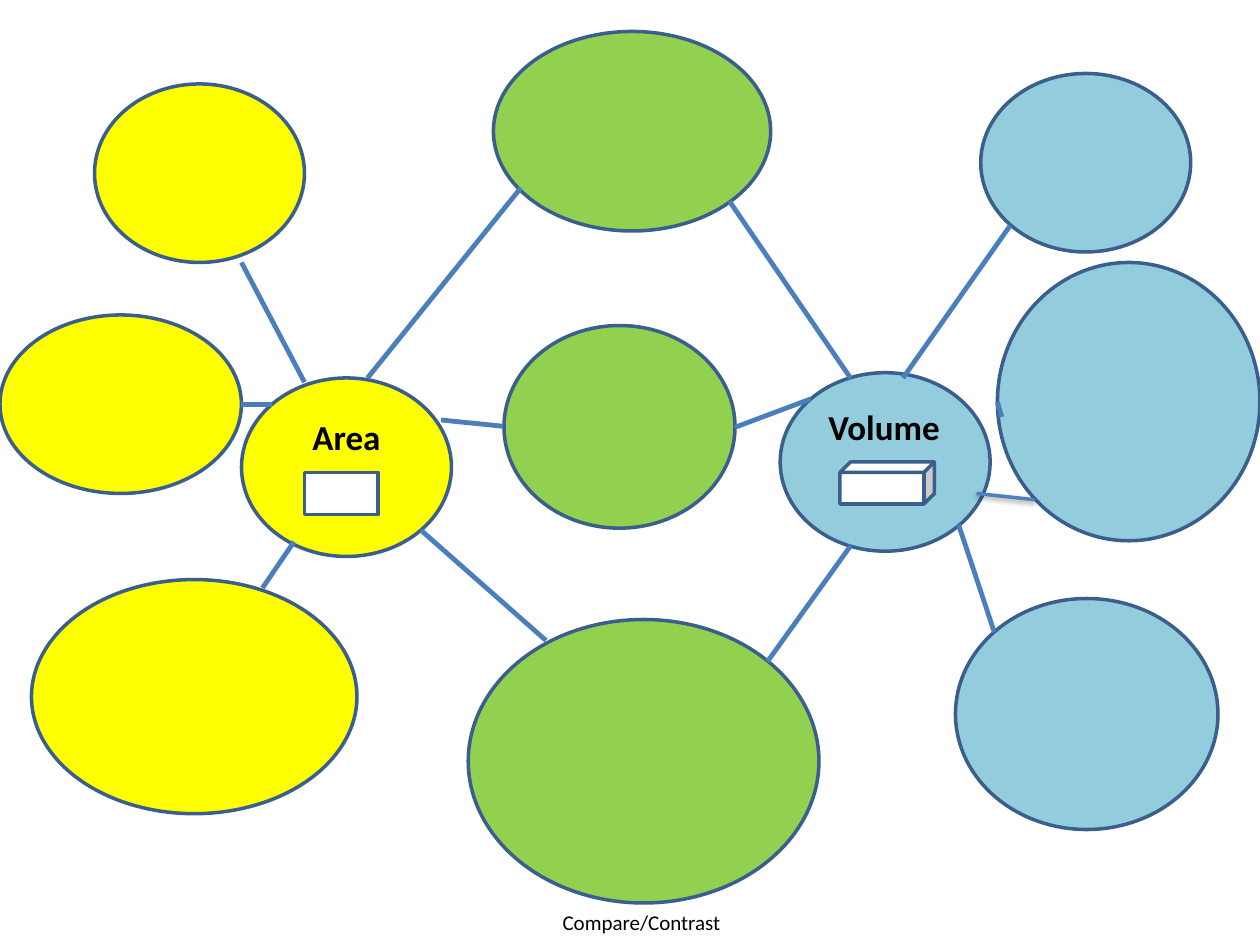
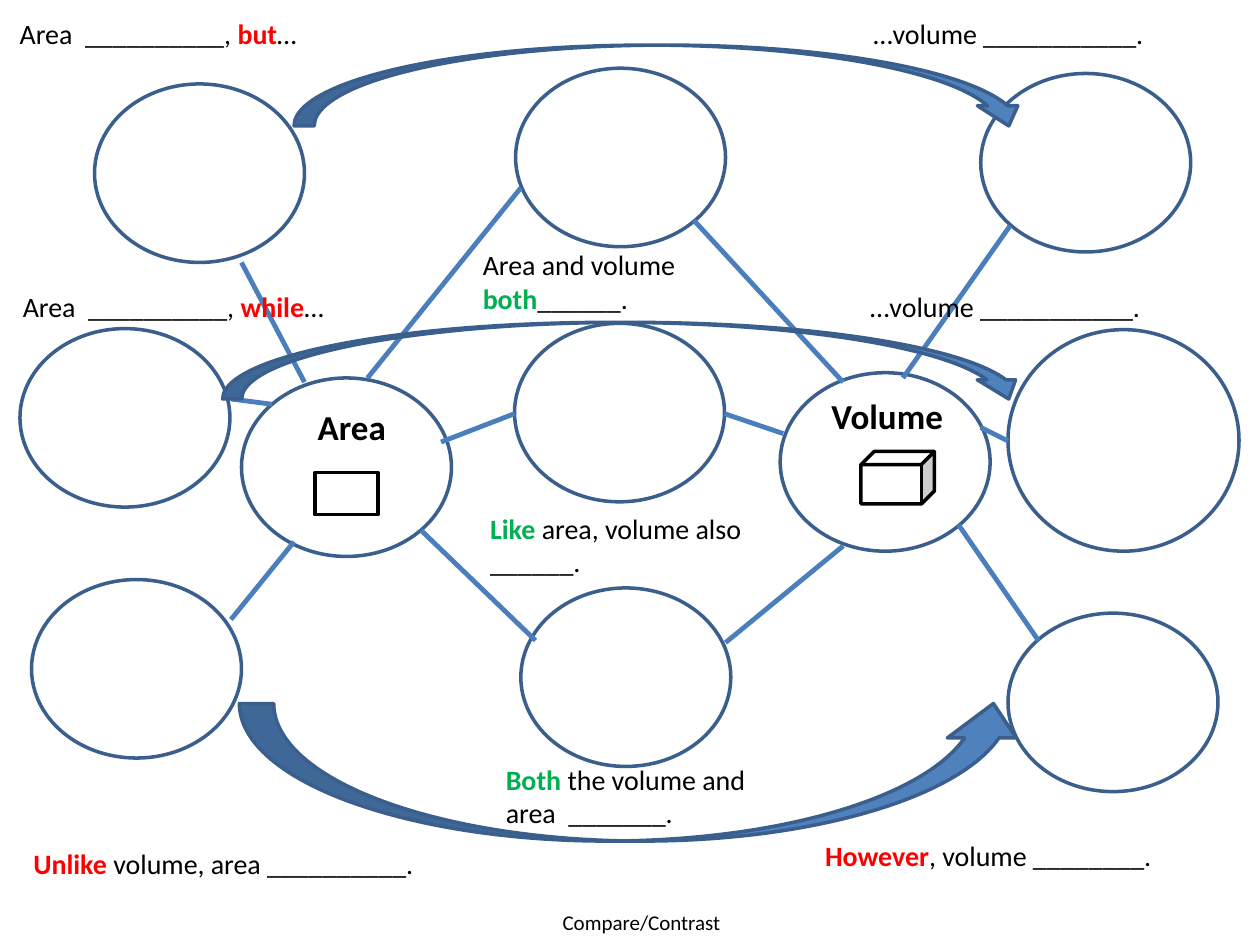
"""Build two compare/contrast organisers for area and volume."""
from lxml.etree import SubElement
from pptx import Presentation
from pptx.dml.color import RGBColor
from pptx.enum.shapes import MSO_CONNECTOR as Link, MSO_SHAPE as Preset
from pptx.enum.text import MSO_AUTO_SIZE as Fit, PP_ALIGN as Align
from pptx.oxml.ns import qn
from pptx.util import Inches, Pt

COLUMNS, ROWS = 120, 90
SLIDE_WIDTH, SLIDE_HEIGHT = Inches(10), Inches(7.5)
COLOURS = {
    "area": "FFFF00", "volume": "93CDDD", "shared": "92D050",
    "outline": "3A5F8C", "spoke": "4B7EBC", "arrow": "4F81BD",
    "ink": "000000", "paper": "FFFFFF",
    "alike": "00B050", "unlike": "FF0000",
}
BUBBLE = (20, 17)
AREA_HUB, VOLUME_HUB = (23, 36, *BUBBLE), (74.3, 35.5, *BUBBLE)
AREA_TOP, VOLUME_TOP = (9, 8, *BUBBLE), (93.4, 7, *BUBBLE)
COMMON_SPOKES = [
    (29, 36.4, 23, 25), (35, 36, 49.6, 17.9), (86, 36, 96.2, 21.5),
]

COLOURED_BUBBLES = {
    "area": [AREA_HUB, AREA_TOP, (0, 30, 23, 17), (3, 55.2, 31, 22.3)],
    "volume": [VOLUME_HUB, VOLUME_TOP, (95, 25, 25, 26.5), (91, 57, 25, 22)],
    "shared": [(47, 3, 26.4, 19), (48, 31, 22, 19.3), (44.6, 59, 33.4, 27)],
}
COLOURED_SPOKES = COMMON_SPOKES + [
    (25.9, 38.5, 23, 38.5), (28, 51.6, 25, 56),
    (42, 40, 47.9, 40.6), (40.1, 50.5, 52, 61),
    (81, 36, 69.5, 19.2), (81, 52, 73.1, 63), (77.2, 38, 70, 40.7),
    (95.4, 39.7, 95, 38.3), (91.3, 50, 94.7, 60.2),
]
OPEN_BUBBLES = {
    None: [
        AREA_HUB, VOLUME_HUB, AREA_TOP, VOLUME_TOP,
        (49.1, 6.5, *BUBBLE), (49, 30.8, *BUBBLE), (49.6, 56, *BUBBLE),
        (1.9, 31.3, *BUBBLE), (3, 55.2, *BUBBLE),
        (96, 31.4, 22, 21.1), (96, 58.4, *BUBBLE),
    ],
}
OPEN_SPOKES = COMMON_SPOKES + [
    (25.9, 38.5, 22, 38), (28, 51.6, 22, 59),
    (42, 42.1, 49, 39.4), (40.1, 50.5, 51, 61),
    (80.3, 36.4, 66.1, 21), (80.3, 52, 69.1, 61.2), (74.6, 41.3, 69, 39.4),
    (93.4, 40.7, 96, 42), (91.3, 50, 98.9, 61),
]
VOLUME_BLANK = [("…volume ___________.", "ink")]
PROMPTS = [
    ((44.8, 23, 30.2, 7.7),
     [("Area and volume ", "ink"), ("both", "alike"), ("______.", "ink")]),
    ((45.5, 48.1, 28.6, 7.7),
     [("Like", "alike"), (" area, volume also ______.", "ink")]),
    ((47, 72, 29.4, 7.7),
     [("Both", "alike"), (" the volume and area  _______.", "ink")]),
    ((0.7, 1, 39.7, 4.4),
     [("Area  __________, ", "ink"), ("but", "unlike"), ("…", "ink")]),
    ((82, 1, 39.7, 4.4), VOLUME_BLANK),
    ((1, 27, 42, 4.4),
     [("Area  __________, ", "ink"), ("while", "unlike"), ("…", "ink")]),
    ((81.7, 27, 39.7, 4.4), VOLUME_BLANK),
    ((2, 80, 42.6, 4.4),
     [("Unlike", "unlike"), (" volume, area __________.", "ink")]),
    ((77.4, 79.3, 42.6, 4.4),
     [("However", "unlike"), (", volume ________.", "ink")]),
]
SWEEPS = [
    (Preset.CURVED_DOWN_ARROW, (28, 4.3, 70, 7.7)),
    (Preset.CURVED_DOWN_ARROW, (21.2, 30.7, 76.7, 7.3)),
    (Preset.CURVED_UP_ARROW, (22.8, 67, 75.1, 13.1)),
]


def colour(name):
    return RGBColor.from_string(COLOURS[name])


def on_grid(place):
    """Turn alternating columns and rows into slide lengths."""
    units = (SLIDE_WIDTH / COLUMNS, SLIDE_HEIGHT / ROWS) * 2
    return [round(share * unit) for share, unit in zip(place, units)]


def apply(target, **values):
    for name, value in values.items():
        setattr(target, name, value)


def add_figure(slide, preset, place, fill=None, outline="outline"):
    figure = slide.shapes.add_shape(preset, *on_grid(place))
    figure.shadow.inherit = False
    if fill:
        figure.fill.solid()
        figure.fill.fore_color.rgb = colour(fill)
    else:
        figure.fill.background()
    figure.line.color.rgb = colour(outline)
    figure.line.width = Pt(2)


def add_spoke(slide, ends, stroke="spoke", width=2.75):
    """Draw a straight line and return its empty effect list."""
    spoke = slide.shapes.add_connector(Link.STRAIGHT, *on_grid(ends))
    spoke.line.color.rgb = colour(stroke)
    spoke.line.width = Pt(width)
    return SubElement(spoke.element.spPr, qn("a:effectLst"))


def add_shadowed_spoke(slide, ends):
    effects = add_spoke(slide, ends, "arrow", 2)
    shadow = SubElement(effects, qn("a:outerShdw"), blurRad="40000",
                        dist="20000", dir="5400000", rotWithShape="0")
    tint = SubElement(shadow, qn("a:srgbClr"), val=COLOURS["ink"])
    SubElement(tint, qn("a:alpha"), val="38000")


def add_words(slide, place, pieces, size, align=Align.LEFT, bold=False):
    """Write one paragraph of (text, colour) pieces; coloured ones are bold."""
    frame = slide.shapes.add_textbox(*on_grid(place)).text_frame
    apply(frame, word_wrap=True, auto_size=Fit.SHAPE_TO_FIT_TEXT)
    sentence = frame.paragraphs[0]
    sentence.alignment = align
    for text, tone in pieces:
        run = sentence.add_run()
        run.text = text
        apply(run.font, name="Calibri", size=Pt(size),
              bold=bold or tone != "ink")
        run.font.color.rgb = colour(tone)


def add_organiser(deck, bubbles, spokes, titles, icons, icon_outline):
    """Add a slide with bubbles, spokes, hub titles, hub icons and footer."""
    slide = deck.slides.add_slide(deck.slide_layouts[6])
    for fill, places in bubbles.items():
        for place in places:
            add_figure(slide, Preset.OVAL, place, fill)
    for ends in spokes:
        add_spoke(slide, ends)
    for title, place in zip(("Area", "Volume"), titles):
        add_words(slide, place, [(title, "ink")], 20, Align.CENTER, True)
    for preset, place in zip((Preset.RECTANGLE, Preset.CUBE), icons):
        add_figure(slide, preset, place, "paper", icon_outline)
    add_words(slide, (46, 86, 30.2, 3.6), [("Compare/Contrast", "ink")], 12,
              Align.CENTER)
    return slide


def main():
    deck = Presentation()
    apply(deck, slide_width=SLIDE_WIDTH, slide_height=SLIDE_HEIGHT)

    coloured = add_organiser(
        deck, COLOURED_BUBBLES, COLOURED_SPOKES,
        titles=[(27, 39, 12, 5.3), (75.7, 38, 17, 5.3)],
        icons=[(29, 45, 7, 4), (80, 44, 9, 4)], icon_outline="outline")
    add_shadowed_spoke(coloured, (93, 47, 98.6, 47.6))

    prompted = add_organiser(
        deck, OPEN_BUBBLES, OPEN_SPOKES,
        titles=[(25, 38, 17, 5.3), (76, 37, 17, 5.3)],
        icons=[(30, 45, 6, 4), (82, 43, 7, 5)], icon_outline="ink")
    for place, pieces in PROMPTS:
        add_words(prompted, place, pieces, 16)
    for preset, place in SWEEPS:
        add_figure(prompted, preset, place, "arrow")

    deck.save("out.pptx")


if __name__ == "__main__":
    main()
